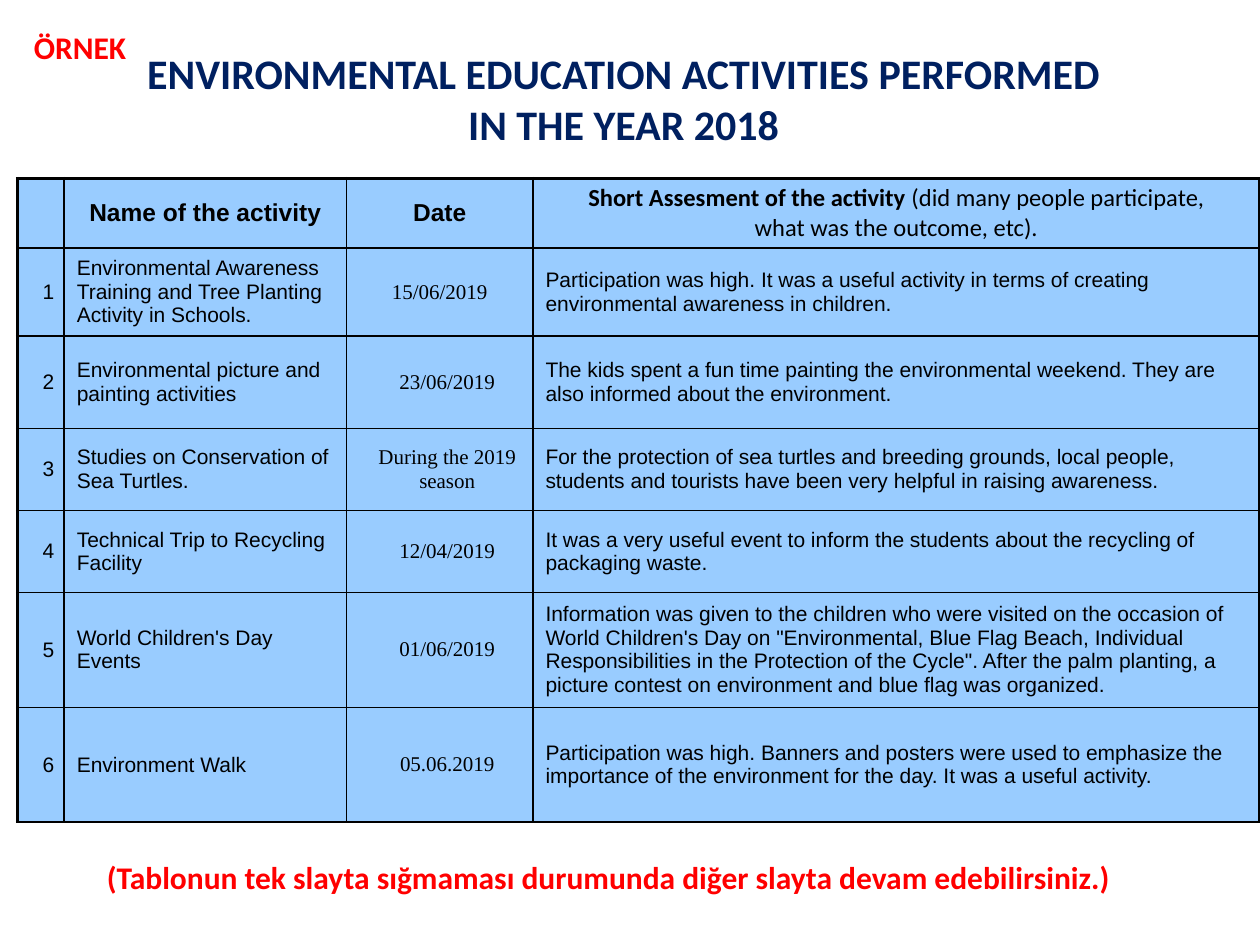
from lxml import etree
from pptx import Presentation
from pptx import util as u
from pptx.dml.color import RGBColor
from pptx.enum import text
from pptx.oxml.ns import qn

HUES = {"navy": "002060", "red": "FF0000", "sky": "99CCFF", "ink": "000000"}
WIDE, HIGH = u.Inches(10), u.Inches(7.5)
COLS = [0.37, 2.24, 1.48, 5.77]
ROWS = [0.55, 0.69, 0.73, 0.65, 0.65, 0.91, 0.91]
THIN, THICK = 1, 2.25
MID = text.PP_ALIGN.CENTER
SERIF = "Times New Roman"

# Each cell is a list of paragraphs, each paragraph a list of (text, bold, font).
HEAD = [
    None,
    [[("Name of the activity", True, "Arial")]],
    [[("Date", True, "Arial")]],
    [[("Short Assesment of the activity", True, "Calibri"),
      (" (did many people participate,", False, "Calibri")],
     [("what was the outcome, etc).", False, "Calibri")]],
]
EVENTS = [
    ("Environmental Awareness Training and Tree Planting Activity in Schools.",
     "15/06/2019",
     "Participation was high. It was a useful activity in terms of creating "
     "environmental awareness in children."),
    ("Environmental picture and\npainting activities",
     "23/06/2019",
     "The kids spent a fun time painting the environmental weekend. They are "
     "also informed about the environment."),
    ("Studies on Conservation of Sea Turtles.",
     "During the 2019 season",
     "For the protection of sea turtles and breeding grounds, local people, "
     "students and tourists have been very helpful in raising awareness."),
    ("Technical Trip to Recycling Facility",
     "12/04/2019",
     "It was a very useful event to inform the students about the recycling "
     "of packaging waste."),
    ("World Children's Day Events",
     "01/06/2019",
     "Information was given to the children who were visited on the occasion "
     "of World Children's Day on \"Environmental, Blue Flag Beach, Individual "
     "Responsibilities in the Protection of the Cycle\". After the palm "
     "planting, a picture contest on environment and blue flag was organized."),
    ("Environment Walk",
     "05.06.2019",
     "Participation was high. Banners and posters were used to emphasize the "
     "importance of the environment for the day. It was a useful activity."),
]


def share(x, y, w, h):
    """Turn shares of the slide into a box in slide units."""
    return [int(WIDE * x), int(HIGH * y), int(WIDE * w), int(HIGH * h)]


def write(frame, paras, size, hue, align=None):
    for i, runs in enumerate(paras):
        para = frame.paragraphs[0] if i == 0 else frame.add_paragraph()
        para.alignment = align
        for words, bold, face in runs:
            run = para.add_run()
            run.text = words
            run.font.size, run.font.bold, run.font.name = u.Pt(size), bold, face
            run.font.color.rgb = RGBColor.from_string(HUES[hue])


def add_title(slide, box, lines):
    title = slide.shapes.title
    title.left, title.top, title.width, title.height = box
    frame = title.text_frame
    frame.word_wrap = False
    frame.auto_size = text.MSO_AUTO_SIZE.NONE
    frame.vertical_anchor = text.MSO_ANCHOR.TOP
    write(frame, [[(line, True, "Calibri")] for line in lines], 24, "navy", MID)


def add_note(slide, box, words):
    frame = slide.shapes.add_textbox(*box).text_frame
    frame.word_wrap = True
    write(frame, [[(words, True, "Calibri")]], 18, "red")


def edge(cell, side, width):
    """Draw one border of a cell; side is L, R, T or B."""
    props = cell._tc.get_or_add_tcPr()
    line = etree.SubElement(props, qn("a:ln" + side), w=str(u.Pt(width)))
    fill = etree.SubElement(line, qn("a:solidFill"))
    etree.SubElement(fill, qn("a:srgbClr"), val=HUES["ink"])


def dress(cell, row, col):
    edge(cell, "L", THICK if col == 0 else THIN)
    edge(cell, "R", THICK if col == len(COLS) - 1 else THIN)
    edge(cell, "T", THICK if row == 0 else THIN)
    edge(cell, "B", THIN)
    cell.fill.solid()
    cell.fill.fore_color.rgb = RGBColor.from_string(HUES["sky"])
    cell.vertical_anchor = text.MSO_ANCHOR.MIDDLE


def indent(cell, left, first=0):
    props = cell.text_frame.paragraphs[0]._p.get_or_add_pPr()
    props.set("marL", str(u.Inches(left)))
    props.set("indent", str(u.Inches(first)))


def fill_head(table):
    for col, paras in enumerate(HEAD):
        cell = table.cell(0, col)
        dress(cell, 0, col)
        if paras:
            side = 0.1 if col == len(COLS) - 1 else 0.07
            cell.margin_left = cell.margin_right = u.Inches(side)
            cell.margin_top = cell.margin_bottom = 0
            write(cell.text_frame, paras, 14, "ink", MID)


def fill_event(table, row, event):
    for col, words in enumerate((str(row), *event)):
        cell = table.cell(row, col)
        dress(cell, row, col)
        face = SERIF if col == 2 else "Arial"
        paras = [[(line, False, face)] for line in words.split("\n")]
        write(cell.text_frame, paras, 12, "ink", MID if col in (0, 2) else None)
        if col in (0, 2):
            indent(cell, 0.12)
    if row == 1:
        indent(table.cell(row, 2), 0.38, -0.38)


def add_events(slide, box):
    table = slide.shapes.add_table(len(ROWS), len(COLS), *box).table
    table.first_row = table.horz_banding = False
    for col, wide in zip(table.columns, COLS):
        col.width = int(box[2] * wide / sum(COLS))
    for row, high in zip(table.rows, ROWS):
        row.height = int(box[3] * high / sum(ROWS))
    fill_head(table)
    for row, event in enumerate(EVENTS, 1):
        fill_event(table, row, event)


def main():
    deck = Presentation()
    deck.slide_width, deck.slide_height = WIDE, HIGH
    slide = deck.slides.add_slide(deck.slide_layouts[5])
    add_title(slide, share(0.1, 0.044, 0.79, 0.121),
              ["ENVIRONMENTAL EDUCATION ACTIVITIES PERFORMED",
               "IN THE YEAR 2018"])
    add_note(slide, share(0.075, 0.901, 0.883, 0.053),
             "(Tablonun tek slayta sığmaması durumunda diğer slayta devam "
             "edebilirsiniz.)")
    add_note(slide, share(0.017, 0.023, 0.142, 0.056), "ÖRNEK")
    add_events(slide, share(0.014, 0.189, 0.986, 0.68))
    deck.save("out.pptx")


if __name__ == "__main__":
    main()
